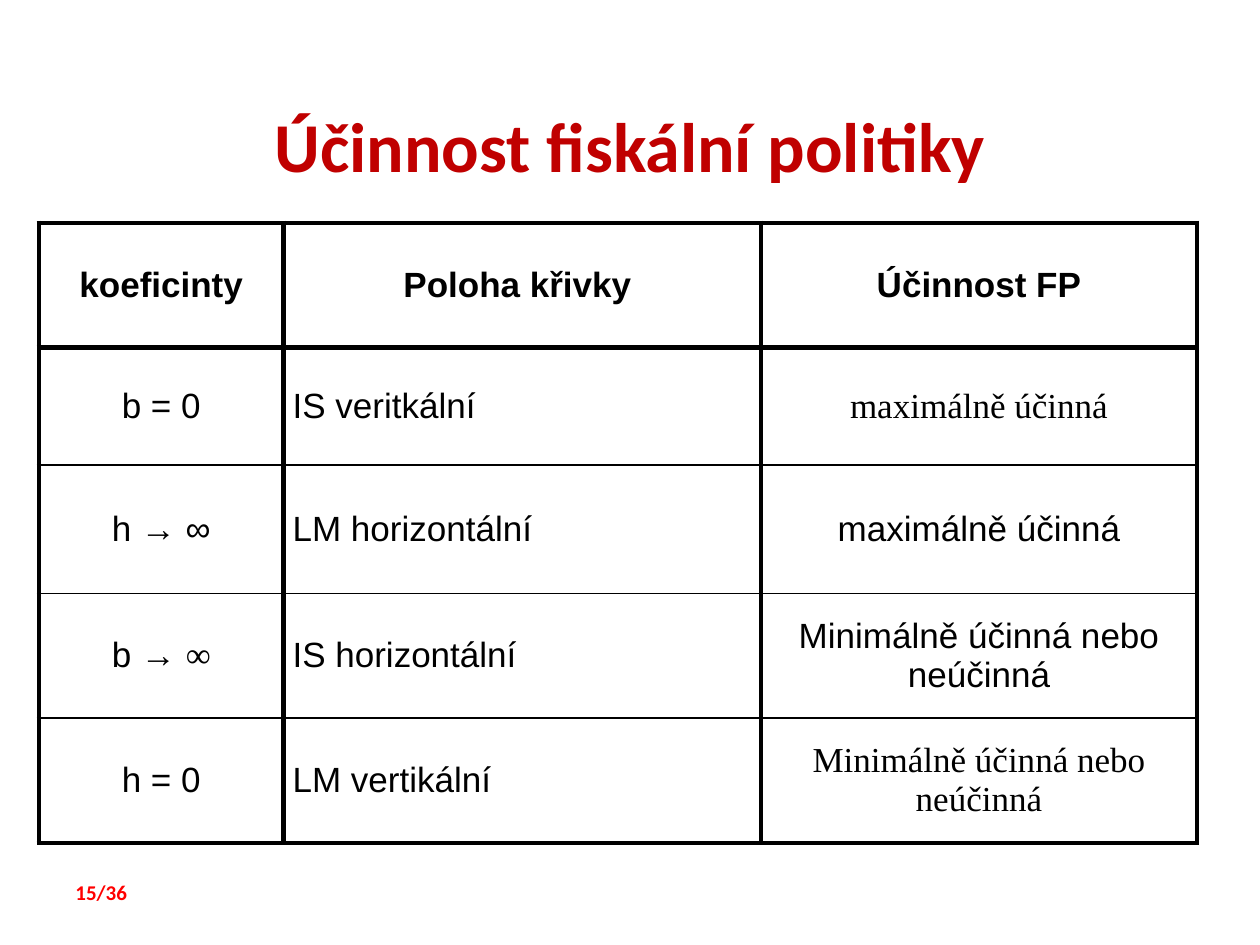
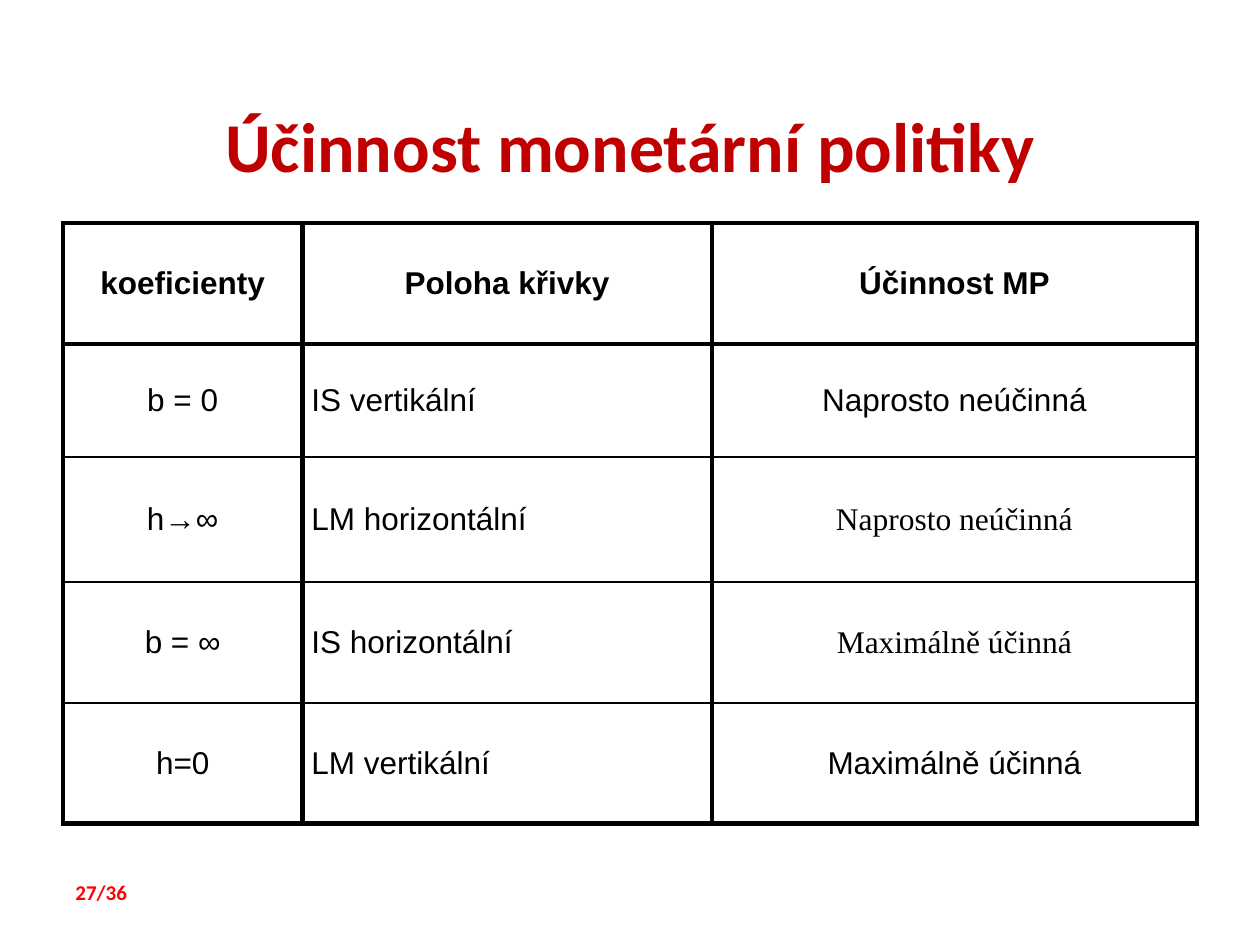
import pptx
import pptx.util
import pptx.dml.color
import pptx.enum.text
import pptx.oxml
import pptx.oxml.ns

Pt = pptx.util.Pt
ALIGN = pptx.enum.text.PP_ALIGN
ANCHOR = pptx.enum.text.MSO_ANCHOR
COLORS = {"title": "C00000", "footer": "FF0000", "ink": "000000"}
HEADING_FONT, BODY_FONT, SERIF_FONT = "Calibri", "Arial", "Times New Roman"
THICK, THIN = 3, 1


def write(frame, text, font=BODY_FONT, size=20, color="ink", bold=False, align=ALIGN.LEFT):
    paragraph = frame.paragraphs[0]
    paragraph.alignment = align
    run = paragraph.add_run()
    run.text = text
    run.font.name = font
    run.font.size = Pt(size)
    run.font.bold = bold
    run.font.color.rgb = pptx.dml.color.RGBColor.from_string(COLORS[color])


def serif(text):
    return [(text, SERIF_FONT)]


class Deck:
    def __init__(self):
        self.prs = pptx.Presentation()
        self.prs.slide_width, self.prs.slide_height = Pt(720), Pt(540)
        self.slide = None

    def new_slide(self, title, page):
        self.slide = self.prs.slides.add_slide(self.prs.slide_layouts[6])
        self.text(title, 36, 37.4, 648, 90, ANCHOR.MIDDLE,
                  size=40, color="title", align=ALIGN.CENTER)
        self.text(page, 36, 499, 66.2, 21.6, ANCHOR.TOP, size=12, color="footer")

    def text(self, text, left, top, width, height, anchor, **style):
        box = self.slide.shapes.add_textbox(Pt(left), Pt(top), Pt(width), Pt(height))
        box.text_frame.word_wrap = True
        box.text_frame.vertical_anchor = anchor
        write(box.text_frame, text, font=HEADING_FONT, bold=True, **style)

    def border(self, cell, side, weight):
        line = pptx.oxml.parse_xml(
            f'<a:ln{side} {pptx.oxml.ns.nsdecls("a")} w="{Pt(weight)}">'
            f'<a:solidFill><a:srgbClr val="{COLORS["ink"]}"/></a:solidFill>'
            f'</a:ln{side}>')
        cell._tc.get_or_add_tcPr().append(line)

    def table(self, left, widths, heights, size, rows):
        frame = self.slide.shapes.add_table(
            len(rows), len(widths), Pt(left), Pt(127.4), Pt(sum(widths)), Pt(sum(heights)))
        table = frame.table
        table.first_row = table.horz_banding = False
        for column, width in zip(table.columns, widths):
            column.width = Pt(width)
        for row, height in zip(table.rows, heights):
            row.height = Pt(height)
        for r, row in enumerate(rows):
            for c, content in enumerate(row):
                self.fill_cell(table.cell(r, c), content, size, r, c, len(rows) - 1)

    def fill_cell(self, cell, content, size, r, c, last):
        cell.margin_left = cell.margin_right = Pt(5.2)
        cell.margin_top = cell.margin_bottom = Pt(2.7)
        cell.vertical_anchor = ANCHOR.MIDDLE
        header = r == 0
        align = ALIGN.LEFT if c == 1 and not header else ALIGN.CENTER
        runs = [(content, BODY_FONT)] if isinstance(content, str) else content
        for text, font in runs:
            write(cell.text_frame, text, font=font, size=size, bold=header, align=align)
        self.border(cell, "L", THICK)
        self.border(cell, "R", THICK)
        self.border(cell, "T", THICK if r <= 1 else THIN)
        self.border(cell, "B", THICK if r in (0, last) else THIN)
        cell.fill.background()


def main():
    deck = Deck()
    deck.new_slide("Účinnost fiskální politiky", "15/36")
    deck.table(22.3, [139.7, 272.9, 249.1], [71.3, 67, 73.4, 71.3, 71.3], 20, [
        ["koeficinty", "Poloha křivky ", "Účinnost FP"],
        ["b = 0", "IS veritkální", serif("maximálně účinná")],
        ["h → ∞", "LM horizontální", "maximálně účinná"],
        [[("b → ", BODY_FONT), ("∞", SERIF_FONT)], "IS horizontální",
         "Minimálně účinná nebo neúčinná"],
        ["h = 0", "LM vertikální", serif("Minimálně účinná nebo neúčinná")],
    ])
    deck.new_slide("Účinnost monetární politiky", "27/36")
    deck.table(36, [136.8, 234, 277.2], [69.1, 64.8, 71.3, 69.1, 69.1], 18, [
        ["koeficienty", "Poloha křivky", "Účinnost MP"],
        ["b = 0", "IS vertikální", "Naprosto neúčinná"],
        ["h→∞", "LM horizontální", serif("Naprosto neúčinná")],
        ["b = ∞", "IS horizontální", serif("Maximálně účinná")],
        ["h=0", "LM vertikální", "Maximálně účinná"],
    ])
    deck.prs.save("out.pptx")


if __name__ == "__main__":
    main()
